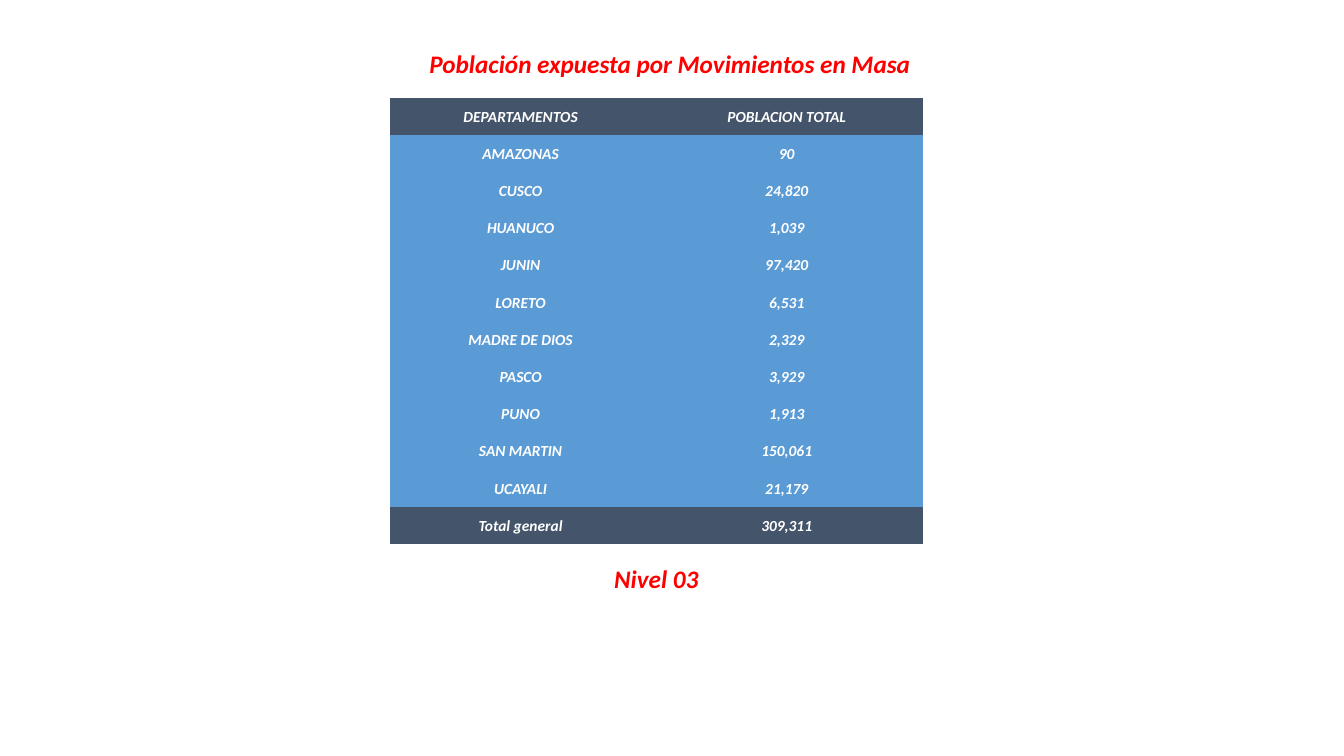
from pptx import Presentation, util as u
from pptx.dml.color import RGBColor
from pptx.enum import text as t
from pptx.oxml.ns import qn
from lxml import etree

ROWS = [
    ("DEPARTAMENTOS", "POBLACION TOTAL"),
    ("AMAZONAS", "90"),
    ("CUSCO", "24,820"),
    ("HUANUCO", "1,039"),
    ("JUNIN", "97,420"),
    ("LORETO", "6,531"),
    ("MADRE DE DIOS", "2,329"),
    ("PASCO", "3,929"),
    ("PUNO", "1,913"),
    ("SAN MARTIN", "150,061"),
    ("UCAYALI", "21,179"),
    ("Total general", "309,311"),
]


def paint(target, color):
    """Give a font or a solid fill its hex colour."""
    target.rgb = RGBColor.from_string(color)


def style(para, size, color):
    """Centre a paragraph in bold italic Calibri."""
    para.alignment = t.PP_ALIGN.CENTER
    font = para.font
    font.name, font.size = "Calibri", u.Pt(size)
    font.bold = font.italic = True
    paint(font.color, color)


def label(slide, box, words, wrap):
    """Place a red heading in the box."""
    frame = slide.shapes.add_textbox(*map(u.Inches, box)).text_frame
    frame.word_wrap = wrap
    frame.auto_size = t.MSO_AUTO_SIZE.SHAPE_TO_FIT_TEXT
    frame.text = words
    style(frame.paragraphs[0], 18, "FF0000")


def fill_cell(cell, words, color):
    """Write one borderless table cell."""
    cell.text = words
    style(cell.text_frame.paragraphs[0], 11, "FFFFFF")
    cell.vertical_anchor = t.MSO_ANCHOR.MIDDLE
    cell.margin_left = cell.margin_right = cell.margin_top = u.Inches(0.01)
    cell.margin_bottom = 0
    props = cell._tc.get_or_add_tcPr()
    for side in ("a:lnL", "a:lnR", "a:lnT", "a:lnB"):
        line = etree.SubElement(props, qn(side), w="0")
        etree.SubElement(line, qn("a:noFill"))
    cell.fill.solid()
    paint(cell.fill.fore_color, color)


def people(slide, box, rows):
    """Place the population table in the box."""
    shape = slide.shapes.add_table(len(rows), 2, *map(u.Inches, box))
    table = shape.table
    table.horz_banding = False
    first = u.Inches(box[2] * 0.49)
    table.columns[0].width = first
    table.columns[1].width = u.Inches(box[2]) - first
    for r, row in enumerate(rows):
        color = "44546A" if r in (0, len(rows) - 1) else "5B9BD5"
        for c, words in enumerate(row):
            fill_cell(table.cell(r, c), words, color)


def main():
    """Build and save the slide."""
    deck = Presentation()
    deck.slide_width, deck.slide_height = u.Inches(13.33), u.Inches(7.5)
    slide = deck.slides.add_slide(deck.slide_layouts[6])
    label(slide, (4.13, 0.43, 5.03, 0.4),
          "Población expuesta por Movimientos en Masa", False)
    label(slide, (5.96, 5.54, 1.1, 0.4), "Nivel 03", True)
    people(slide, (3.87, 0.97, 5.28, 4.43), ROWS)
    deck.save("out.pptx")


if __name__ == "__main__":
    main()
